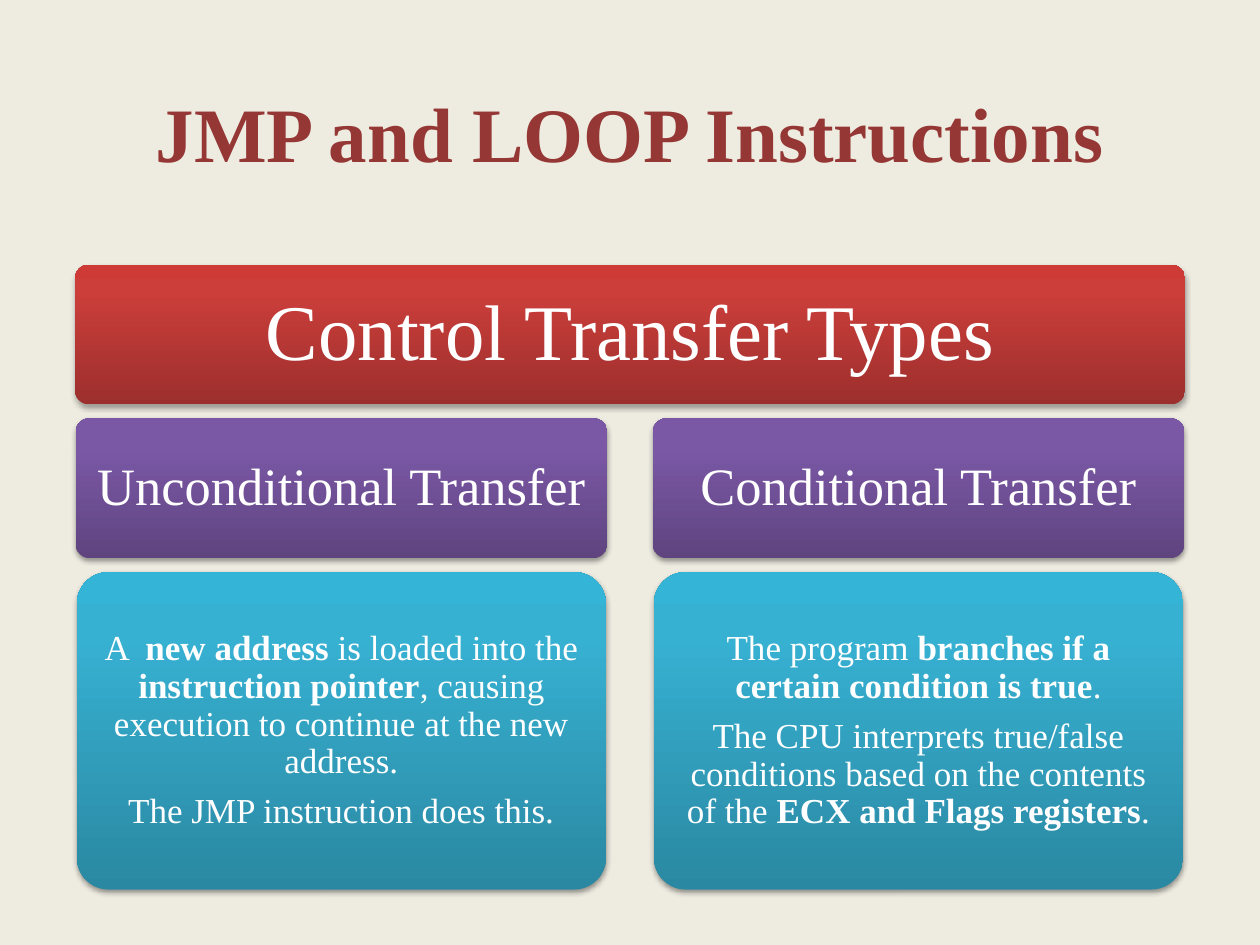
from dataclasses import dataclass

from pptx import Presentation
from pptx.dml.color import RGBColor
from pptx.enum.shapes import MSO_SHAPE as Preset
from pptx.enum.text import MSO_ANCHOR as Anchor, PP_ALIGN as Align
from pptx.oxml import parse_xml
from pptx.oxml.ns import nsdecls
from pptx.util import Inches, Pt

FONT = "Times New Roman"
CENTERS = (2.71, 5, 7.29)  # left column, whole width, right column
ROW_TOP, ROW_PITCH = 2.1, 1.22


@dataclass(frozen=True)
class CardStyle:
    row: int
    width: float
    height: float
    font_size: int
    inset: float
    gradient: tuple[str, str, str]  # bottom, near the top, top
    shadow_distance: float = 1.6
    shadow_opacity: int = 38


@dataclass(frozen=True)
class Card:
    style: CardStyle
    column: int
    paragraphs: tuple[str, ...]  # every second part between bars is bold


HEADLINE = CardStyle(0, 8.81, 1.11, 45, 0.19, ("9C2F2D", "CB3E3A", "CE3B37"), 1.8, 35)
BRANCH = CardStyle(1, 4.22, 1.11, 30, 0.12, ("5F4480", "7B58A6", "7C57A8"))
DETAIL = CardStyle(2, 4.2, 2.52, 20, 0.08, ("2A88A2", "37B1D2", "34B4D6"))

CARDS = (
    Card(HEADLINE, 1, ("Control Transfer Types",)),
    Card(BRANCH, 0, ("Unconditional Transfer",)),
    Card(DETAIL, 0, (
        "A  |new address |is loaded into the |instruction pointer|"
        ", causing execution to continue at the new address.",
        "The JMP instruction does this.",
    )),
    Card(BRANCH, 2, ("Conditional Transfer",)),
    Card(DETAIL, 2, (
        "The program |branches if a certain condition is true|.",
        "The CPU interprets true/false conditions based on the contents of the "
        "|ECX and Flags registers|.",
    )),
)


def color(hex_value: str) -> RGBColor:
    return RGBColor.from_string(hex_value)


def format_run(run, size: int, hex_value: str, bold: bool) -> None:
    run.font.name = FONT
    run.font.size = Pt(size)
    run.font.bold = bold
    run.font.color.rgb = color(hex_value)


def add_gradient_and_shadow(shape, style: CardStyle) -> None:
    stops = "".join(
        f'<a:gs pos="{position * 1000}"><a:srgbClr val="{hex_value}"/></a:gs>'
        for position, hex_value in zip((0, 80, 100), style.gradient)
    )
    properties = shape._element.spPr
    shape.line.fill.background()
    shape.fill.gradient()
    shape.fill.gradient_angle = 90
    stop_list = properties.find(".//{*}gsLst")
    stop_list.getparent().replace(
        stop_list, parse_xml(f'<a:gsLst {nsdecls("a")}>{stops}</a:gsLst>')
    )
    properties.append(parse_xml(
        f'<a:effectLst {nsdecls("a")}><a:outerShdw blurRad="{Pt(3.1)}" '
        f'dist="{Pt(style.shadow_distance)}" dir="5400000" rotWithShape="0">'
        f'<a:srgbClr val="000000"><a:alpha val="{style.shadow_opacity * 1000}"/>'
        "</a:srgbClr></a:outerShdw></a:effectLst>"
    ))


def add_card(slide, card: Card) -> None:
    style = card.style
    shape = slide.shapes.add_shape(
        Preset.ROUNDED_RECTANGLE,
        Inches(CENTERS[card.column] - style.width / 2),
        Inches(ROW_TOP + style.row * ROW_PITCH),
        Inches(style.width),
        Inches(style.height),
    )
    shape.adjustments[0] = 0.1
    add_gradient_and_shadow(shape, style)

    frame = shape.text_frame
    frame.word_wrap = True
    frame.vertical_anchor = Anchor.MIDDLE
    frame.margin_left = frame.margin_right = Inches(style.inset)
    frame.margin_top = frame.margin_bottom = Inches(style.inset)
    for index, text in enumerate(card.paragraphs):
        paragraph = frame.add_paragraph() if index else frame.paragraphs[0]
        paragraph.alignment = Align.CENTER
        paragraph.line_spacing = 0.9
        paragraph.space_after = Pt(0.35 * style.font_size)
        for part_index, part in enumerate(text.split("|")):
            run = paragraph.add_run()
            run.text = part
            format_run(run, style.font_size, "FFFFFF", part_index % 2 == 1)


def set_title(slide, text: str) -> None:
    title = slide.shapes.title
    title.left, title.top = Inches(0), Inches(0.39)
    title.width, title.height = Inches(10), Inches(1.31)
    frame = title.text_frame
    frame.text = text
    frame.word_wrap = True
    frame.vertical_anchor = Anchor.MIDDLE
    frame.paragraphs[0].alignment = Align.CENTER
    format_run(frame.paragraphs[0].runs[0], 44, "953735", True)


def main() -> None:
    presentation = Presentation()
    presentation.slide_width, presentation.slide_height = Inches(10), Inches(7.5)
    slide = presentation.slides.add_slide(presentation.slide_layouts[5])
    slide.background.fill.solid()
    slide.background.fill.fore_color.rgb = color("EEECE1")
    set_title(slide, "JMP and LOOP Instructions")
    for card in CARDS:
        add_card(slide, card)
    presentation.save("out.pptx")


if __name__ == "__main__":
    main()
